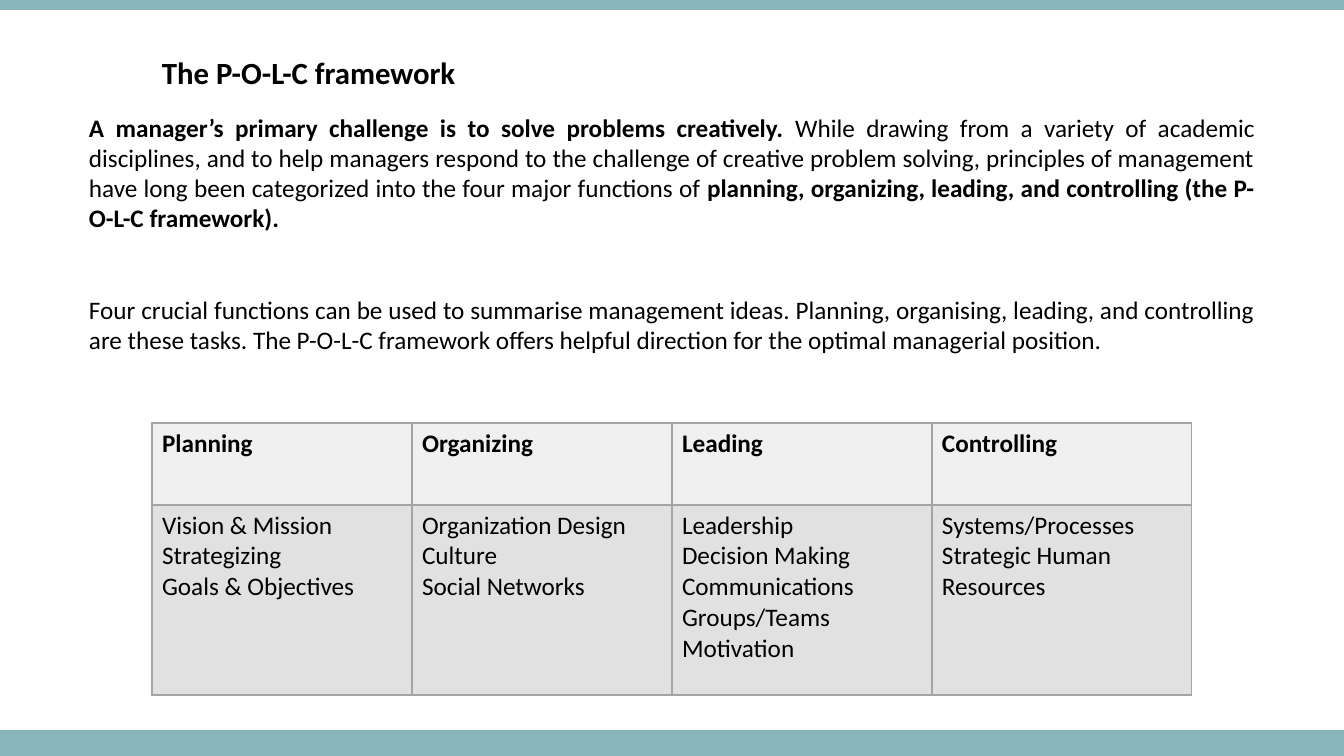
import dataclasses

import pptx
import pptx.dml.color
import pptx.enum.shapes
import pptx.enum.text
import pptx.oxml
import pptx.oxml.ns
import pptx.util


@dataclasses.dataclass(frozen=True)
class Theme:
    font: str = "Calibri"
    text: str = "000000"
    band: str = "87B5BA"
    header_fill: str = "F0F0F0"
    body_fill: str = "E1E1E1"
    border: str = "A5A5A5"
    title_size: int = 22
    body_size: int = 18
    paragraph_gap: int = 44


THEME = Theme()
EMU_PER_PX = 914400 / 100.8
SLIDE_WIDTH, SLIDE_HEIGHT = 1344, 756

INTRODUCTION = [
    [
        ("A manager’s primary challenge is to solve problems creatively. ", True),
        ("While drawing from a variety of academic disciplines, and to help managers "
         "respond to the challenge of creative problem solving, principles of management "
         "have long been categorized into the four major functions of ", False),
        ("planning, organizing, leading, and controlling (the P-O-L-C framework). ", True),
    ],
    [
        ("Four crucial functions can be used to summarise management ideas. Planning, "
         "organising, leading, and controlling are these tasks. The P-O-L-C framework "
         "offers helpful direction for the optimal managerial position. ", False),
    ],
]

FUNCTIONS = {
    "Planning": ["Vision & Mission", "Strategizing", "Goals & Objectives"],
    "Organizing": ["Organization Design", "Culture", "Social Networks"],
    "Leading": ["Leadership", "Decision Making", "Communications", "Groups/Teams", "Motivation"],
    "Controlling": ["Systems/Processes", "Strategic Human Resources"],
}


def px(length):
    return pptx.util.Emu(round(length * EMU_PER_PX))


def color(value):
    return pptx.dml.color.RGBColor.from_string(value)


def style_run(run, size, bold):
    run.font.name = THEME.font
    run.font.size = pptx.util.Pt(size)
    run.font.bold = bold
    run.font.color.rgb = color(THEME.text)


def add_text_box(slide, box):
    text_frame = slide.shapes.add_textbox(*map(px, box)).text_frame
    text_frame.word_wrap = True
    text_frame.auto_size = pptx.enum.text.MSO_AUTO_SIZE.SHAPE_TO_FIT_TEXT
    return text_frame


def add_band(slide, box):
    band = slide.shapes.add_shape(pptx.enum.shapes.MSO_SHAPE.RECTANGLE, *map(px, box))
    band.shadow.inherit = False
    band.fill.solid()
    band.fill.fore_color.rgb = color(THEME.band)
    band.line.fill.background()


def add_title(slide, box):
    text_frame = add_text_box(slide, box)
    text_frame.text = "The P-O-L-C framework"
    style_run(text_frame.paragraphs[0].runs[0], THEME.title_size, True)


def add_introduction(slide, box):
    text_frame = add_text_box(slide, box)
    for index, pieces in enumerate(INTRODUCTION):
        paragraph = text_frame.add_paragraph() if index else text_frame.paragraphs[0]
        paragraph.alignment = pptx.enum.text.PP_ALIGN.JUSTIFY
        paragraph.space_before = pptx.util.Pt(THEME.paragraph_gap if index else 0)
        for text, bold in pieces:
            run = paragraph.add_run()
            run.text = text
            style_run(run, THEME.body_size, bold)


def add_borders(cell):
    properties = cell._tc.get_or_add_tcPr()
    for side in ("lnL", "lnR", "lnT", "lnB"):
        properties.append(pptx.oxml.parse_xml(
            f'<a:{side} {pptx.oxml.ns.nsdecls("a")} w="{pptx.util.Pt(1)}">'
            f'<a:solidFill><a:srgbClr val="{THEME.border}"/></a:solidFill></a:{side}>'
        ))


def fill_cell(cell, lines, fill, bold):
    add_borders(cell)
    cell.fill.solid()
    cell.fill.fore_color.rgb = color(fill)
    cell.text_frame.text = "\n".join(lines)
    for paragraph in cell.text_frame.paragraphs:
        style_run(paragraph.runs[0], THEME.body_size, bold)


def add_functions_table(slide, box, header_height):
    left, top, width, height = box
    table = slide.shapes.add_table(2, len(FUNCTIONS), *map(px, box)).table
    table.first_row = False
    table.horz_banding = False
    table.rows[0].height = px(header_height)
    table.rows[1].height = px(height - header_height)
    for index, (function, topics) in enumerate(FUNCTIONS.items()):
        table.columns[index].width = px(width / len(FUNCTIONS))
        fill_cell(table.cell(0, index), [function], THEME.header_fill, True)
        fill_cell(table.cell(1, index), topics, THEME.body_fill, False)


def build_framework_slide(presentation):
    slide = presentation.slides.add_slide(presentation.slide_layouts[6])
    add_band(slide, (0, 730, SLIDE_WIDTH, 26))
    add_band(slide, (0, 0, SLIDE_WIDTH, 10))
    add_introduction(slide, (79, 107, 1186, 254))
    add_functions_table(slide, (152, 423, 1040, 272), 82)
    add_title(slide, (152, 49, 653, 47))


def main():
    presentation = pptx.Presentation()
    presentation.slide_width = px(SLIDE_WIDTH)
    presentation.slide_height = px(SLIDE_HEIGHT)
    build_framework_slide(presentation)
    presentation.save("out.pptx")


if __name__ == "__main__":
    main()
